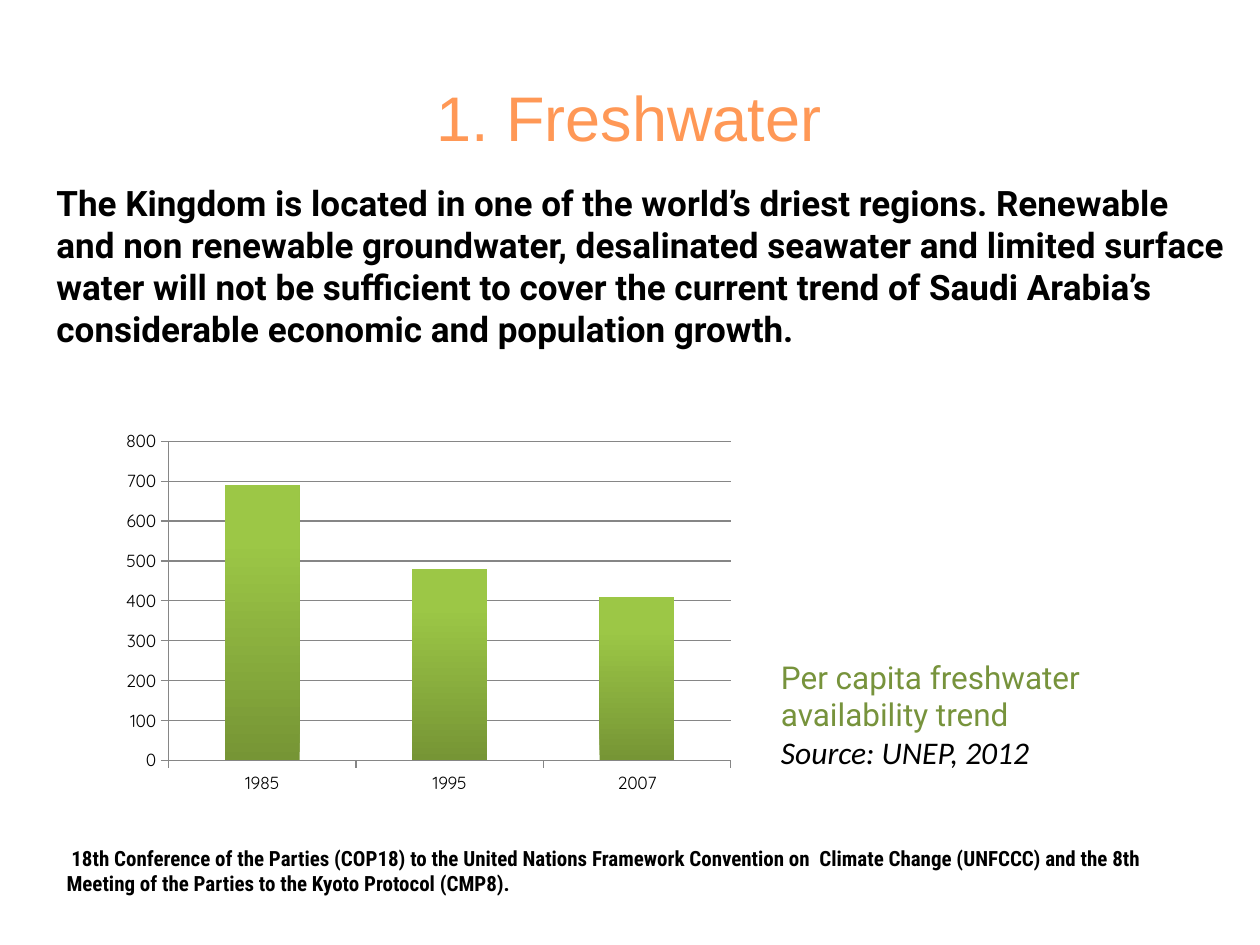
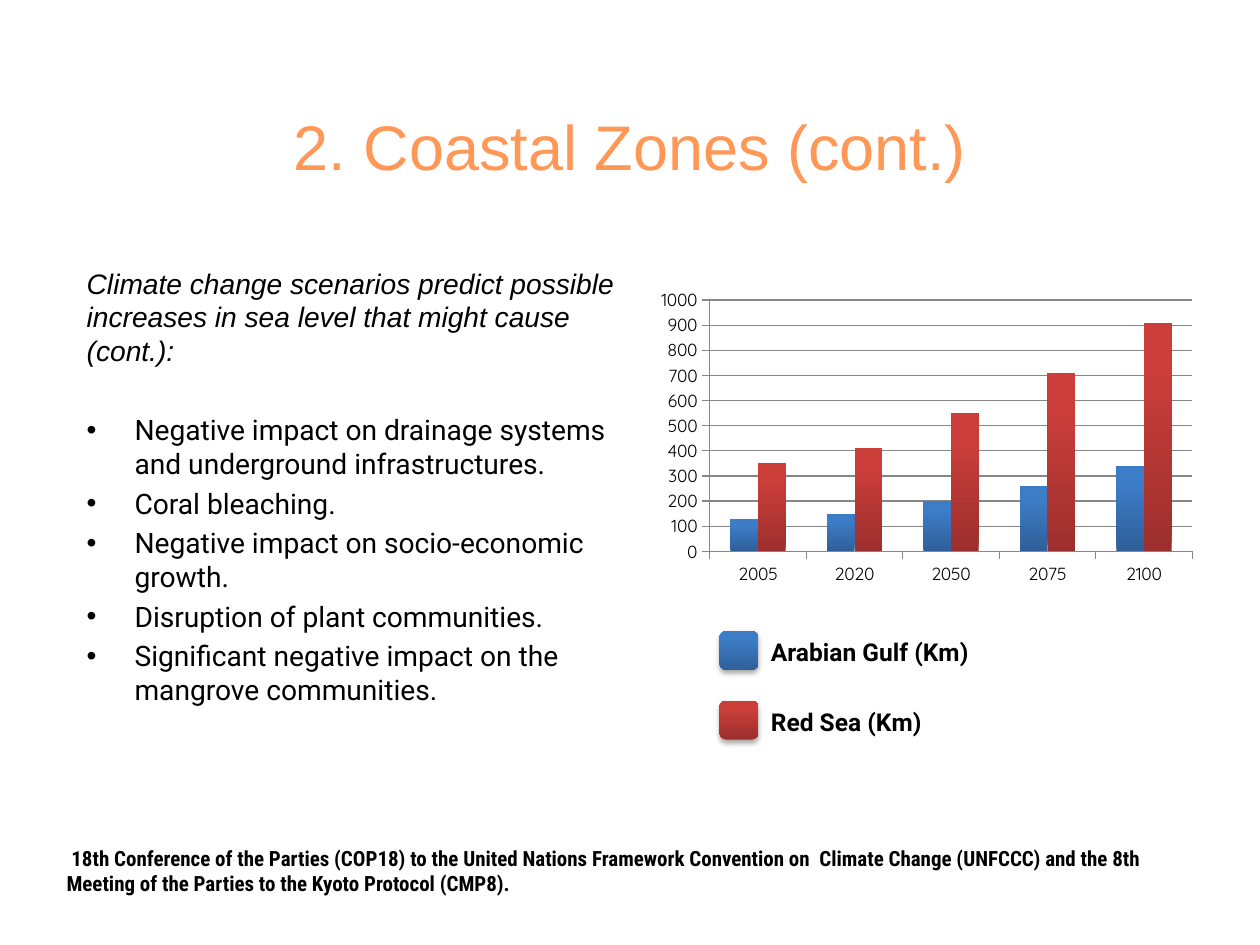
from lxml import etree
from pptx import Presentation
from pptx.chart.data import CategoryChartData
from pptx.dml.color import RGBColor
from pptx.enum.chart import XL_CHART_TYPE, XL_TICK_MARK
from pptx.enum.shapes import MSO_SHAPE
from pptx.enum.text import MSO_ANCHOR, PP_ALIGN
from pptx.oxml import parse_xml
from pptx.oxml.ns import nsdecls, qn
from pptx.util import Inches, Pt

BLACK = RGBColor(0x00, 0x00, 0x00)
ORANGE = RGBColor(0xFF, 0x98, 0x56)
OLIVE = RGBColor(0x77, 0x93, 0x3C)
GRID_GREY = RGBColor(0x86, 0x86, 0x86)
# Gradients run from the dark foot to the light top
GREEN = (RGBColor(0x76, 0x95, 0x35), RGBColor(0x9C, 0xC7, 0x46))
BLUE = (RGBColor(0x2F, 0x5F, 0x99), RGBColor(0x3D, 0x7C, 0xC7))
RED = (RGBColor(0x9C, 0x2F, 0x2D), RGBColor(0xCB, 0x3E, 0x3A))

TITLE = {"name": "Arial", "size": Pt(36), "color": ORANGE}
FOOTER = {"name": "Roboto Condensed", "size": Pt(12), "bold": True}
STATEMENT = {"name": "Roboto", "size": Pt(20), "bold": True}
CAPTION = {"name": "Roboto", "size": Pt(18), "color": OLIVE}
SOURCE = {"name": "Calibri", "size": Pt(18), "italic": True}
INTRO = {"name": "Arial", "size": Pt(16.1), "italic": True}
BULLET = {"name": "Roboto", "size": Pt(16.1)}
LEGEND = {"name": "Roboto", "size": Pt(14), "bold": True}
AXIS = {"name": "Quicksand", "size": Pt(10)}

FOOTER_TEXT = (
    " 18th Conference of the Parties (COP18) to the United Nations Framework "
    "Convention on  Climate Change (UNFCCC) and the 8th Meeting of the Parties "
    "to the Kyoto Protocol (CMP8)."
)


def format_font(font, style):
    for key, value in {"color": BLACK, **style}.items():
        if key == "color":
            font.color.rgb = value
        else:
            setattr(font, key, value)


def fill_gradient(fill, colors):
    fill.gradient()
    fill.gradient_angle = 90
    for stop, color, position in zip(fill.gradient_stops, colors, (0, 0.8)):
        stop.color.rgb = color
        stop.position = position


def add_bullet(p):
    pPr = p._p.get_or_add_pPr()
    pPr.set("marL", str(Inches(0.38)))
    pPr.set("indent", str(-Inches(0.38)))
    etree.SubElement(pPr, qn("a:buFont")).set("typeface", "Arial")
    etree.SubElement(pPr, qn("a:buChar")).set("char", "•")


def add_soft_shadow(shape):
    shape._element.spPr.append(parse_xml(
        f'<a:effectLst {nsdecls("a")}>'
        f'<a:outerShdw blurRad="{Pt(3.1)}" dist="{Pt(1.8)}" dir="5400000" rotWithShape="0">'
        '<a:srgbClr val="000000"><a:alpha val="35000"/></a:srgbClr>'
        '</a:outerShdw></a:effectLst>'))


class Deck:
    def __init__(self):
        self.prs = Presentation()
        self.prs.slide_width = Inches(10)
        self.prs.slide_height = Inches(7.5)
        self.s = None

    def slide(self, title, top, left=0.5):
        """Start a slide with its title and the shared footer."""
        self.s = self.prs.slides.add_slide(self.prs.slide_layouts[5])
        sp = self.s.shapes.title
        place = {"left": left, "top": top, "width": 9, "height": 1.25}
        for key, value in place.items():
            setattr(sp, key, Inches(value))
        sp.text_frame.vertical_anchor = MSO_ANCHOR.MIDDLE
        p = sp.text_frame.paragraphs[0]
        p.alignment = PP_ALIGN.CENTER
        r = p.add_run()
        r.text = title
        format_font(r.font, TITLE)
        self.text(0.43, 6.66, 9.29, 0.69, [(FOOTER_TEXT, FOOTER)])

    def text(self, left, top, width, height, lines):
        """Add a text box with one paragraph per (text, style) and return its paragraphs."""
        tf = self.s.shapes.add_textbox(
            Inches(left), Inches(top), Inches(width), Inches(height)).text_frame
        tf.word_wrap = True
        for i, (text, style) in enumerate(lines):
            p = tf.add_paragraph() if i else tf.paragraphs[0]
            r = p.add_run()
            r.text = text
            format_font(r.font, style)
        return tf.paragraphs

    def bullets(self, left, top, width, height, intro, items):
        lines = [(intro, INTRO)] + [(item, BULLET) for item in items]
        paragraphs = self.text(left, top, width, height, lines)
        for p in paragraphs:
            p.line_spacing = Pt(19.4)
        for p in paragraphs[1:]:
            p.space_before = Pt(3.2)
            add_bullet(p)
        paragraphs[1].space_before = Pt(25.6)

    def column_chart(self, left, top, width, height, categories, series, step_max):
        """Add columns; series holds (values, gradient) pairs."""
        data = CategoryChartData()
        data.categories = categories
        for i, (values, _) in enumerate(series, 1):
            data.add_series(f"Series {i}", values)
        chart = self.s.shapes.add_chart(
            XL_CHART_TYPE.COLUMN_CLUSTERED, Inches(left), Inches(top),
            Inches(width), Inches(height), data).chart
        chart.has_legend = False
        chart.has_title = False
        format_font(chart.font, {"name": "Calibri", "size": Pt(10)})
        plot = chart.plots[0]
        plot.gap_width = 150
        plot.overlap = 0
        plot.vary_by_categories = False
        for drawn, (_, colors) in zip(plot.series, series):
            fill_gradient(drawn.format.fill, colors)
        value_axis = chart.value_axis
        scale = {"minimum_scale": 0, "maximum_scale": step_max, "major_unit": 100}
        for key, value in scale.items():
            setattr(value_axis, key, value)
        value_axis.has_major_gridlines = True
        for axis in (chart.category_axis, value_axis):
            axis.major_tick_mark = XL_TICK_MARK.OUTSIDE
            format_font(axis.tick_labels.font, AXIS)
            axis.format.line.color.rgb = GRID_GREY
        value_axis.major_gridlines.format.line.color.rgb = GRID_GREY

    def legend_entry(self, left, top, label, colors):
        key_size = 0.31
        sp = self.s.shapes.add_shape(
            MSO_SHAPE.ROUNDED_RECTANGLE, Inches(left), Inches(top),
            Inches(key_size), Inches(key_size))
        fill_gradient(sp.fill, colors)
        sp.line.fill.background()
        add_soft_shadow(sp)
        self.text(left + key_size, top, 3.23, 0.34, [(label, LEGEND)])


def freshwater(deck):
    deck.slide("1. Freshwater", 0.3, left=0.49)
    statement = deck.text(0.35, 1.39, 9.5, 1.81, [(
        "The Kingdom is located in one of the world’s driest regions. Renewable and "
        "non renewable groundwater, desalinated seawater and limited surface water "
        "will not be sufficient to cover the current trend of Saudi Arabia’s "
        "considerable economic and population growth.", STATEMENT)])
    statement[0].line_spacing = Pt(24)
    deck.text(6.1, 5.17, 3.04, 1.01, [
        ("Per capita freshwater availability trend", CAPTION),
        ("Source: UNEP, 2012", SOURCE)])
    deck.column_chart(0.9, 3.36, 5, 3, ["1985", "1995", "2007"],
                      [((690, 480, 410), GREEN)], 800)


def coastal_zones(deck):
    deck.slide("2. Coastal Zones (cont.)", 0.53)
    deck.bullets(
        0.59, 2.06, 4.57, 3.58,
        "Climate change scenarios predict possible increases in sea level that "
        "might cause (cont.):",
        ["Negative impact on drainage systems and underground infrastructures.",
         "Coral bleaching.",
         "Negative impact on socio-economic growth.",
         "Disruption of plant communities.",
         "Significant negative impact on the mangrove communities."])
    deck.column_chart(
        5.16, 2.25, 4.39, 2.44, ["2005", "2020", "2050", "2075", "2100"],
        [((130, 150, 200, 260, 340), BLUE), ((350, 410, 550, 710, 910), RED)], 1000)
    entries = [("Arabian Gulf (Km)", BLUE), ("Red Sea (Km)", RED)]
    for i, (label, colors) in enumerate(entries):
        deck.legend_entry(5.71, 5.01 + 0.55 * i, label, colors)


def main():
    deck = Deck()
    freshwater(deck)
    coastal_zones(deck)
    deck.prs.save("out.pptx")


if __name__ == "__main__":
    main()
